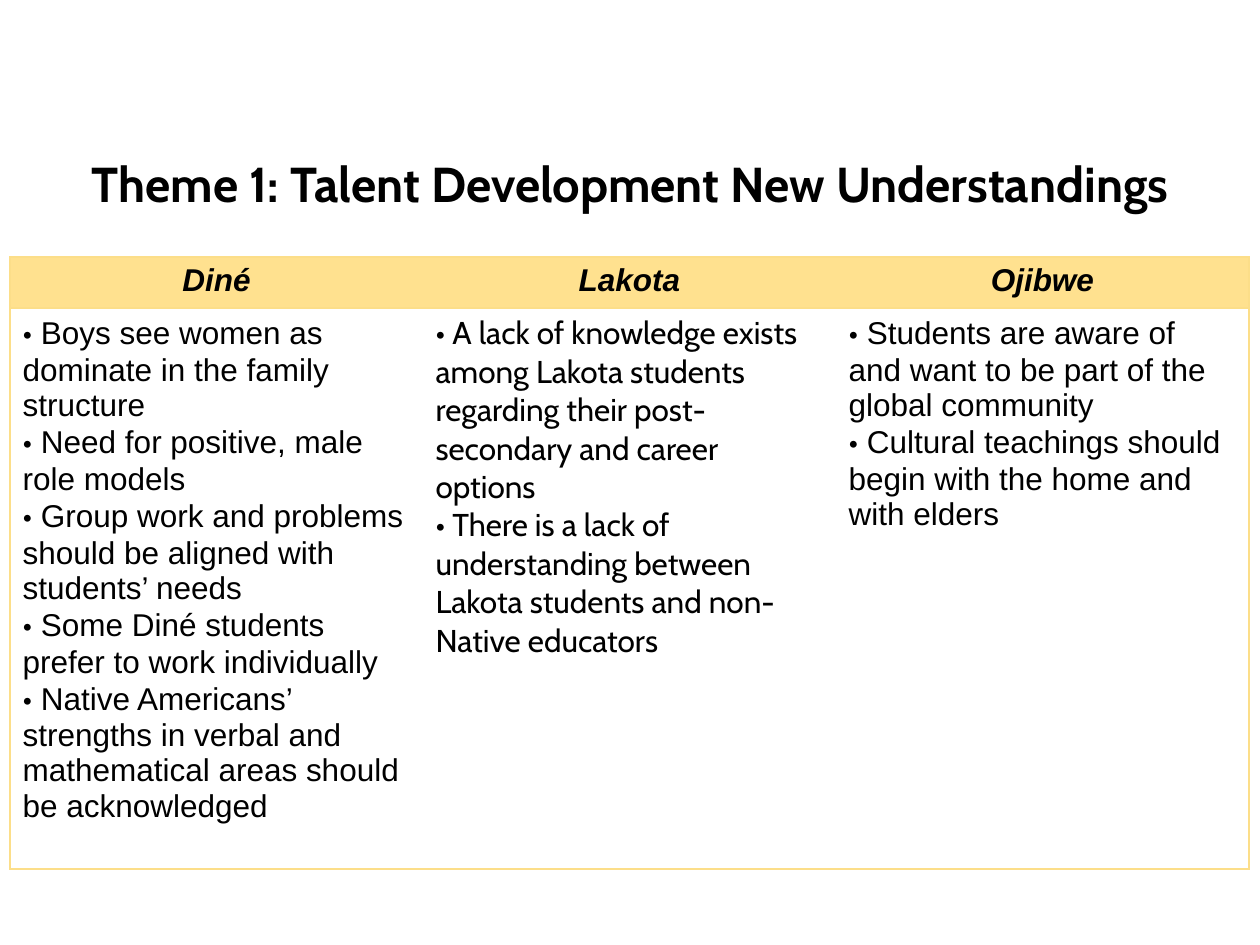
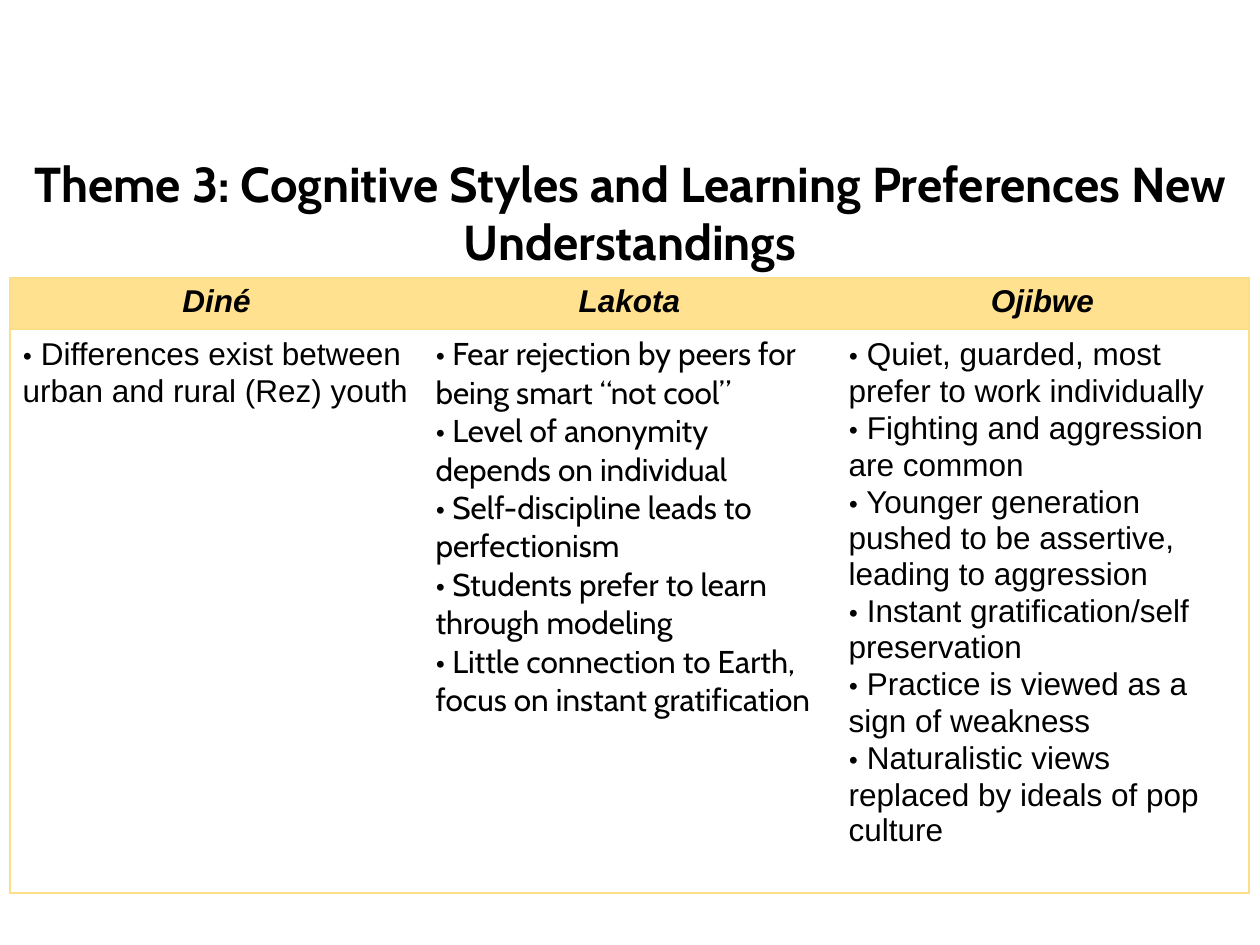
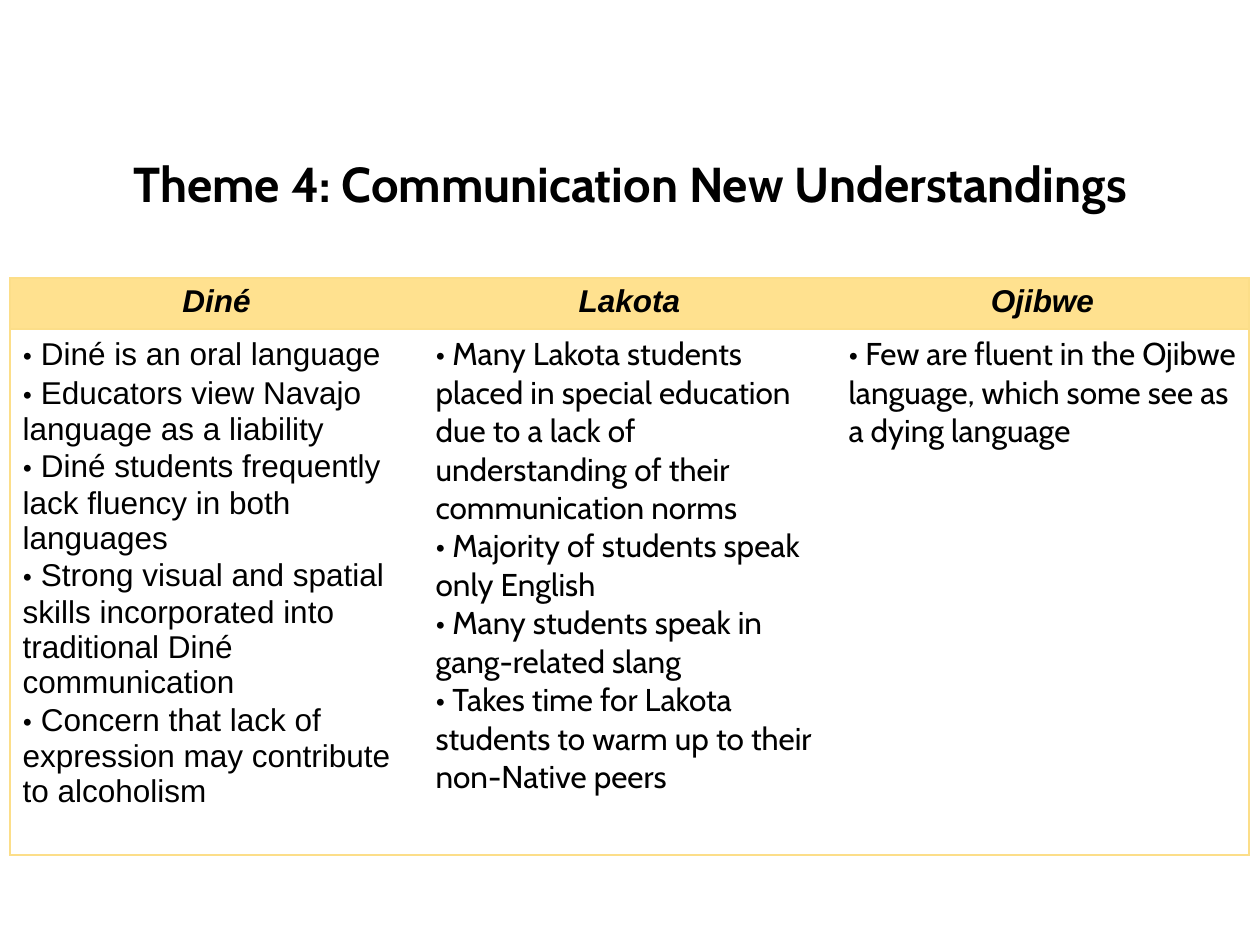
from lxml import etree
from pptx import Presentation
from pptx.dml.color import RGBColor
from pptx.enum import text
from pptx.oxml import ns
from pptx.util import Emu, Pt

# Shared look
PX = 914400 / 126
PAGE_W, PAGE_H = 1260, 945
BLACK, HEADER_FILL, BORDER = "000000", "FFE18F", "FCDE89"
SANS, CABIN = "Arial", "Cabin"
TITLE_TOP, TITLE_H = 147, 73
TABLE_LEFT, COLUMN_W, HEADER_H = 10, 413, 51
NATIONS = ["Diné", "Lakota", "Ojibwe"]

# Each theme: title, table top, body height, then a font and points per nation
THEMES = [
    ("Theme 1: Talent Development New Understandings", 257, 561, [
        (SANS, ["Boys see women as dominate in the family structure",
                "Need for positive, male role models",
                "Group work and problems should be aligned with students’ needs",
                "Some Diné students prefer to work individually",
                "Native Americans’ strengths in verbal and mathematical areas "
                "should be acknowledged"]),
        (CABIN, ["A lack of knowledge exists among Lakota students regarding "
                 "their post-secondary and career options",
                 "There is a lack of understanding between Lakota students "
                 "and non-Native educators"]),
        (SANS, ["Students are aware of and want to be part of the global community",
                "Cultural teachings should begin with the home and with elders"]),
    ]),
    ("Theme 3: Cognitive Styles and Learning Preferences New Understandings", 278, 564, [
        (SANS, ["Differences exist between urban and rural (Rez) youth"]),
        (CABIN, ["Fear rejection by peers for being smart “not cool”",
                 "Level of anonymity depends on individual",
                 "Self-discipline leads to perfectionism",
                 "Students prefer to learn through modeling",
                 "Little connection to Earth, focus on instant gratification"]),
        (SANS, ["Quiet, guarded, most prefer to work individually",
                "Fighting and aggression are common",
                "Younger generation pushed to be assertive, leading to aggression",
                "Instant gratification/self preservation",
                "Practice is viewed as a sign of weakness",
                "Naturalistic views replaced by ideals of pop culture"]),
    ]),
    ("Theme 4: Communication New Understandings", 278, 526, [
        (SANS, ["Diné is an oral language",
                "Educators view Navajo language as a liability",
                "Diné students frequently lack fluency in both languages",
                "Strong visual and spatial skills incorporated into traditional "
                "Diné communication",
                "Concern that lack of expression may contribute to alcoholism"]),
        (CABIN, ["Many Lakota students placed in special education due to a lack "
                 "of understanding of their communication norms",
                 "Majority of students speak only English",
                 "Many students speak in gang-related slang",
                 "Takes time for Lakota students to warm up to their non-Native peers"]),
        (CABIN, ["Few are fluent in the Ojibwe language, which some see as a "
                 "dying language"]),
    ]),
]


def px(length):
    return Emu(round(length * PX))


def color(value):
    return RGBColor.from_string(value)


def add_span(para, words, font, size, bold=False, italic=False):
    span = para.add_run()
    span.text = words
    span.font.name, span.font.size = font, Pt(size)
    span.font.bold, span.font.italic = bold, italic
    span.font.color.rgb = color(BLACK)


def add_title(page, words):
    box = page.shapes.add_textbox(0, px(TITLE_TOP), px(PAGE_W), px(TITLE_H))
    box.text_frame.word_wrap = True
    para = box.text_frame.paragraphs[0]
    para.alignment = text.PP_ALIGN.CENTER
    add_span(para, words, CABIN, 28, bold=True)


def set_borders(cell, visible):
    """Draw the named sides (of L, R, T, B) and hide the others."""
    properties = cell._tc.get_or_add_tcPr()
    for side in "LRTB":
        line = etree.SubElement(properties, ns.qn(f"a:ln{side}"), w=str(Pt(0.75)))
        if side in visible:
            fill = etree.SubElement(line, ns.qn("a:solidFill"))
            etree.SubElement(fill, ns.qn("a:srgbClr"), val=BORDER)
        else:
            etree.SubElement(line, ns.qn("a:noFill"))


def fill_header(cell, nation):
    cell.fill.solid()
    cell.fill.fore_color.rgb = color(HEADER_FILL)
    para = cell.text_frame.paragraphs[0]
    para.alignment = text.PP_ALIGN.CENTER
    add_span(para, nation, SANS, 18, bold=True, italic=True)


def fill_points(cell, font, points):
    cell.fill.background()
    frame = cell.text_frame
    for index, point in enumerate(points):
        para = frame.add_paragraph() if index else frame.paragraphs[0]
        add_span(para, "•", CABIN, 18)
        add_span(para, " " + point, font, 18)


def add_nations_table(page, top, body_height, columns):
    last = len(NATIONS) - 1
    table = page.shapes.add_table(
        2, len(NATIONS), px(TABLE_LEFT), px(top),
        px(COLUMN_W * len(NATIONS)), px(HEADER_H + body_height)).table
    table.horz_banding = False
    table.rows[0].height, table.rows[1].height = px(HEADER_H), px(body_height)
    for index, (nation, (font, points)) in enumerate(zip(NATIONS, columns)):
        table.columns[index].width = px(COLUMN_W)
        outer = "L" * (index == 0) + "R" * (index == last)
        for row in range(2):
            set_borders(table.cell(row, index), "TB" + outer)
        fill_header(table.cell(0, index), nation)
        fill_points(table.cell(1, index), font, points)


def main():
    deck = Presentation()
    deck.slide_width, deck.slide_height = px(PAGE_W), px(PAGE_H)
    for title, top, body_height, columns in THEMES:
        page = deck.slides.add_slide(deck.slide_layouts[6])
        add_title(page, title)
        add_nations_table(page, top, body_height, columns)
    deck.save("out.pptx")


if __name__ == "__main__":
    main()
